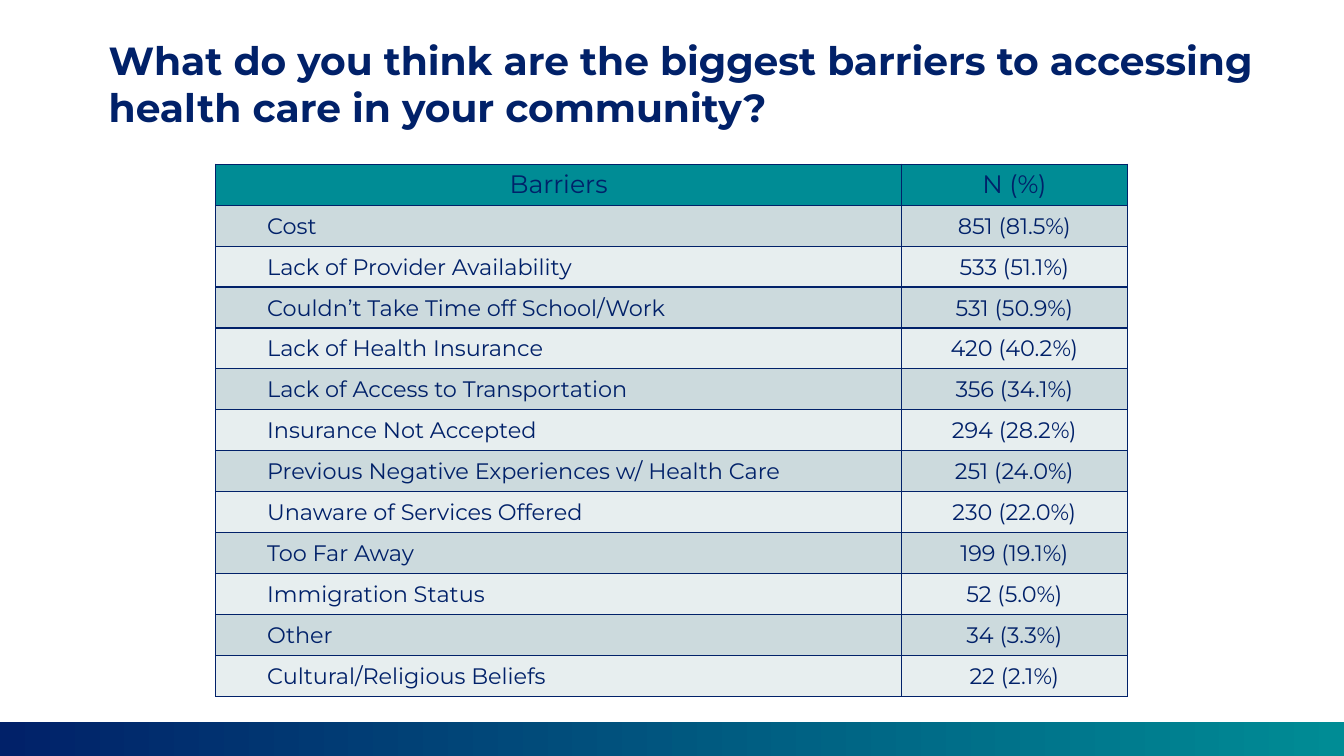
from lxml.etree import SubElement
from pptx import Presentation
from pptx.dml.color import RGBColor
from pptx.enum.shapes import MSO_SHAPE as Shape
from pptx.enum.text import MSO_ANCHOR as Anchor, PP_ALIGN as Align
from pptx.oxml.ns import qn
from pptx.util import Inches, Pt

NAVY = RGBColor(0x01, 0x21, 0x69)
TEAL = RGBColor(0x00, 0x8C, 0x95)
BAND_DARK = RGBColor(0xCC, 0xDA, 0xDD)
BAND_LIGHT = RGBColor(0xE7, 0xEE, 0xEF)
FONT = "Montserrat"

SLIDE_W, SLIDE_H = Inches(13.33), Inches(7.5)
FOOTER_H = Inches(0.34)
TABLE_LEFT, TABLE_TOP = Inches(2.14), Inches(1.63)
COLUMN_WIDTHS = Inches(6.8), Inches(2.24)
ROW_H = Inches(0.406)

TITLE = ("What do you think are the biggest barriers to accessing "
         "health care in your community?")
HEADINGS = ("Barriers", "N (%)")
BARRIERS = [
    ("Cost", "851 (81.5%)"),
    ("Lack of Provider Availability", "533 (51.1%)"),
    ("Couldn’t Take Time off School/Work", "531 (50.9%)"),
    ("Lack of Health Insurance", "420 (40.2%)"),
    ("Lack of Access to Transportation", "356 (34.1%)"),
    ("Insurance Not Accepted", "294 (28.2%)"),
    ("Previous Negative Experiences w/ Health Care", "251 (24.0%)"),
    ("Unaware of Services Offered", "230 (22.0%)"),
    ("Too Far Away", "199 (19.1%)"),
    ("Immigration Status", "52 (5.0%)"),
    ("Other", "34 (3.3%)"),
    ("Cultural/Religious Beliefs", "22 (2.1%)"),
]


def write(frame, text, size=16, bold=False, align=Align.LEFT, indent=0):
    """Put one formatted paragraph into a text frame."""
    frame.word_wrap = True
    paragraph = frame.paragraphs[0]
    paragraph.alignment = align
    if indent:
        paragraph.level = 1
        properties = paragraph._p.get_or_add_pPr()
        properties.set("marL", str(indent))
        properties.set("indent", "0")
    run = paragraph.add_run()
    run.text = text
    run.font.name = FONT
    run.font.size = Pt(size)
    run.font.bold = bold
    run.font.color.rgb = NAVY


def paint_cell(cell, color):
    """Rule all four sides of a cell, then fill it."""
    properties = cell._tc.get_or_add_tcPr()
    for side in ("lnL", "lnR", "lnT", "lnB"):
        rule = SubElement(properties, qn(f"a:{side}"), w=str(Pt(1)))
        solid = SubElement(rule, qn("a:solidFill"))
        SubElement(solid, qn("a:srgbClr"), val=str(NAVY))
    cell.fill.solid()
    cell.fill.fore_color.rgb = color


def add_title(slide):
    heading = slide.shapes.add_textbox(
        Inches(0.98), Inches(0.31), Inches(12.06), Inches(1.04))
    write(heading.text_frame, TITLE, size=28, bold=True)


def add_barriers_table(slide):
    row_count = len(BARRIERS) + 1
    table = slide.shapes.add_table(
        row_count, len(HEADINGS), TABLE_LEFT, TABLE_TOP,
        sum(COLUMN_WIDTHS), ROW_H * row_count).table
    for column, width in zip(table.columns, COLUMN_WIDTHS):
        column.width = width
    for row in table.rows:
        row.height = ROW_H

    # Header row
    for col, heading in enumerate(HEADINGS):
        cell = table.cell(0, col)
        paint_cell(cell, TEAL)
        write(cell.text_frame, heading, size=18, align=Align.CENTER)

    # Banded body rows
    for row, barrier in enumerate(BARRIERS, start=1):
        for col, text in enumerate(barrier):
            cell = table.cell(row, col)
            cell.vertical_anchor = Anchor.MIDDLE
            cell.margin_left = cell.margin_right = cell.margin_top = Inches(0.01)
            cell.margin_bottom = 0
            paint_cell(cell, BAND_DARK if row % 2 else BAND_LIGHT)
            if col == 0:
                write(cell.text_frame, text, indent=Inches(0.5))
            else:
                write(cell.text_frame, text, align=Align.CENTER)


def add_footer_band(slide):
    band = slide.shapes.add_shape(
        Shape.RECTANGLE, 0, SLIDE_H - FOOTER_H, SLIDE_W, FOOTER_H)
    band.shadow.inherit = False
    band.line.fill.background()
    band.fill.gradient()
    band.fill.gradient_angle = 0
    for stop, color in zip(band.fill.gradient_stops, (NAVY, TEAL)):
        stop.color.rgb = color


def main():
    deck = Presentation()
    deck.slide_width, deck.slide_height = SLIDE_W, SLIDE_H
    slide = deck.slides.add_slide(deck.slide_layouts[6])
    add_barriers_table(slide)
    add_title(slide)
    add_footer_band(slide)
    deck.save("out.pptx")


if __name__ == "__main__":
    main()
